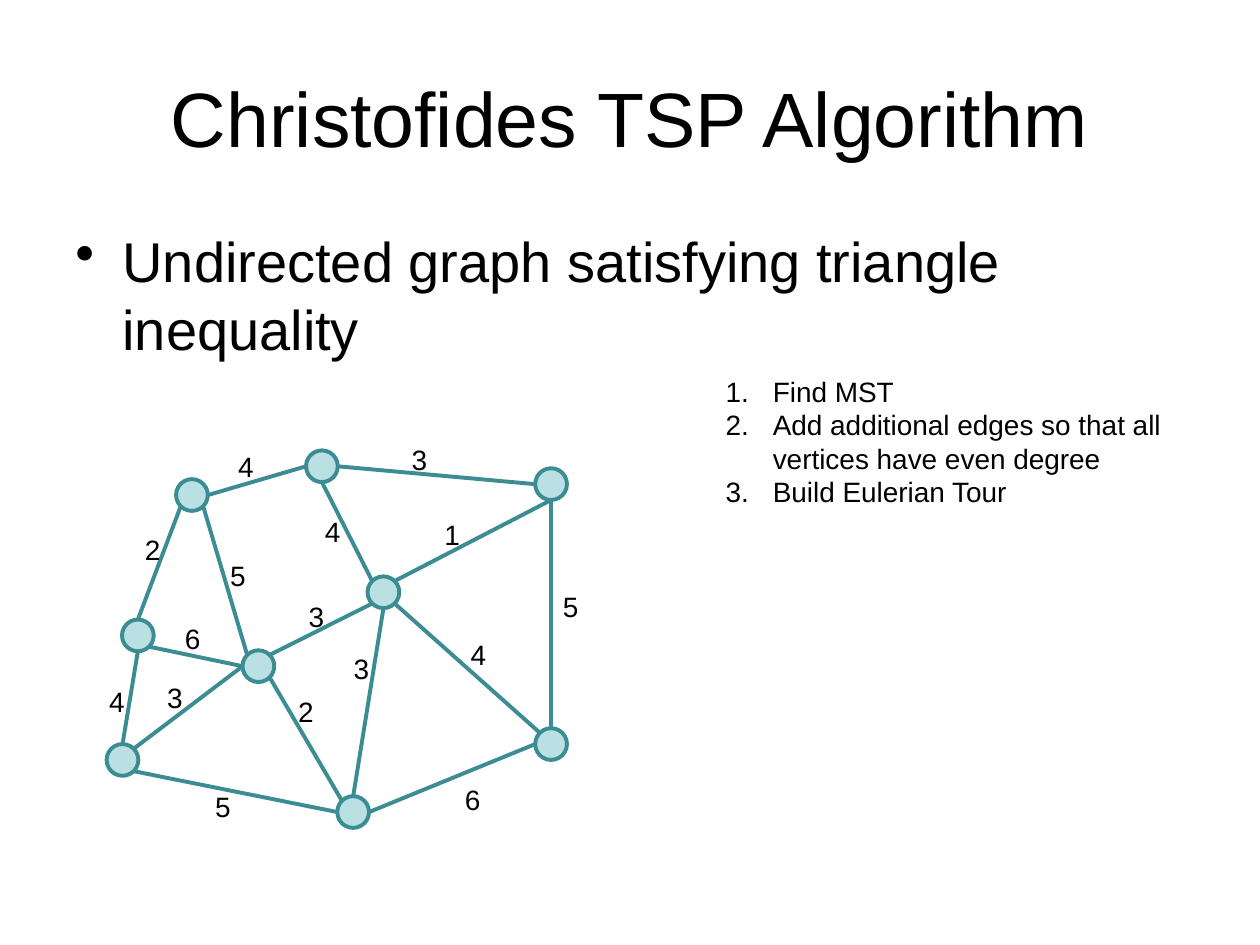
from math import hypot

from lxml.etree import SubElement
from pptx import Presentation
from pptx.dml.color import RGBColor
from pptx.enum.shapes import MSO_CONNECTOR as Link, MSO_SHAPE as Form
from pptx.enum.text import MSO_ANCHOR as Anchor, PP_ALIGN as Align
from pptx.oxml.ns import qn
from pptx.util import Cm, Pt

BLACK = RGBColor(0x00, 0x00, 0x00)
TEAL = RGBColor(0x3C, 0x8C, 0x93)
PALE = RGBColor(0xBB, 0xE0, 0xE3)

# Vertex centres in cm
NODES = {
    "A": (3.87, 9.98), "B": (6.49, 9.4), "C": (11.11, 9.76),
    "D": (7.73, 11.94), "E": (2.78, 12.81), "F": (5.21, 13.43),
    "G": (2.47, 15.32), "H": (7.12, 16.37), "I": (11.11, 15),
}

# Ends, compass side left at each end, weight, weight centre in cm
EDGES = [
    ("AF", "SE", "NW", 5, (4.81, 11.6)),
    ("AE", "SW", "N", 2, (3.09, 11.09)),
    ("AB", "E", "W", 4, (4.97, 9.41)),
    ("BC", "E", "W", 3, (8.47, 9.26)),
    ("BD", "S", "NW", 4, (6.72, 10.71)),
    ("CD", "S", "NE", 1, (9.13, 10.78)),
    ("FD", "NE", "SW", 3, (6.39, 12.43)),
    ("EF", "SE", "W", 6, (3.9, 12.87)),
    ("EG", "S", "N", 4, (2.37, 14.14)),
    ("GF", "NE", "W", 3, (3.54, 14.06)),
    ("DH", "S", "N", 3, (7.3, 13.47)),
    ("CI", "S", "N", 5, (11.52, 12.23)),
    ("DI", "SE", "NW", 4, (9.66, 13.2)),
    ("HI", "E", "W", 6, (9.54, 16.12)),
    ("FH", "SE", "NW", 2, (6.18, 14.34)),
    ("GH", "SE", "W", 5, (4.51, 16.27)),
]

STEPS = [
    "Find MST",
    "Add additional edges so that all vertices have even degree",
    "Build Eulerian Tour",
]


class Board:
    font = "Arial"
    size = 0.64
    width = Pt(2.25)
    indent = Cm(0.95)

    def __init__(self, slide):
        self.slide = slide

    def text(self, box, lines, size, align=Align.LEFT, anchor=Anchor.TOP, wrap=True):
        shape = self.slide.shapes.add_textbox(*map(Cm, box))
        frame = shape.text_frame
        frame.word_wrap = wrap
        frame.vertical_anchor = anchor
        frame.text = "\n".join(lines)
        for par in frame.paragraphs:
            par.alignment = align
            par.font.name = self.font
            par.font.size = Pt(size)
            par.font.color.rgb = BLACK
        return frame.paragraphs

    def items(self, box, lines, size, tag, **mark):
        pars = self.text(box, lines, size)
        for par in pars:
            props = par._p.get_or_add_pPr()
            props.set("marL", str(self.indent))
            props.set("indent", str(-self.indent))
            SubElement(props, qn(tag), **mark)
        return pars

    def node(self, x, y):
        half = self.size / 2
        box = (x - half, y - half, self.size, self.size)
        dot = self.slide.shapes.add_shape(Form.OVAL, *map(Cm, box))
        dot.shadow.inherit = False
        dot.fill.solid()
        dot.fill.fore_color.rgb = PALE
        dot.line.color.rgb = TEAL
        dot.line.width = self.width

    def port(self, name, side):
        """Point on the rim of a vertex in a compass direction."""
        x, y = NODES[name]
        dx = ("E" in side) - ("W" in side)
        dy = ("S" in side) - ("N" in side)
        scale = self.size / 2 / hypot(dx, dy)
        return Cm(x + dx * scale), Cm(y + dy * scale)

    def edge(self, ends, out, into):
        start, stop = self.port(ends[0], out), self.port(ends[1], into)
        line = self.slide.shapes.add_connector(Link.STRAIGHT, *start, *stop)
        line.line.color.rgb = TEAL
        line.line.width = self.width
        SubElement(line._element.spPr, qn("a:effectLst"))

    def weight(self, value, x, y):
        wide, high = 0.84, 0.94
        box = (x - wide / 2, y - high / 2, wide, high)
        self.text(box, [str(value)], 16, wrap=False)


def main():
    deck = Presentation()
    deck.slide_width, deck.slide_height = Cm(25.4), Cm(19.05)
    board = Board(deck.slides.add_slide(deck.slide_layouts[6]))

    # Title and statement
    board.text((1.27, 0.76, 22.86, 3.18), ["Christofides TSP Algorithm"], 44,
               Align.CENTER, Anchor.MIDDLE)
    pars = board.items((1.27, 4.45, 22.86, 4.04),
                       ["Undirected graph satisfying triangle inequality"],
                       32, "a:buChar", char="•")
    pars[0].space_before = Pt(6.4)

    # Graph
    for x, y in NODES.values():
        board.node(x, y)
    for ends, out, into, _, _ in EDGES:
        board.edge(ends, out, into)
    for *_, value, spot in EDGES:
        board.weight(value, *spot)

    # Steps
    board.items((14.38, 7.42, 10.34, 3.68), STEPS, 16,
                "a:buAutoNum", type="arabicPeriod")

    deck.save("out.pptx")


if __name__ == "__main__":
    main()
